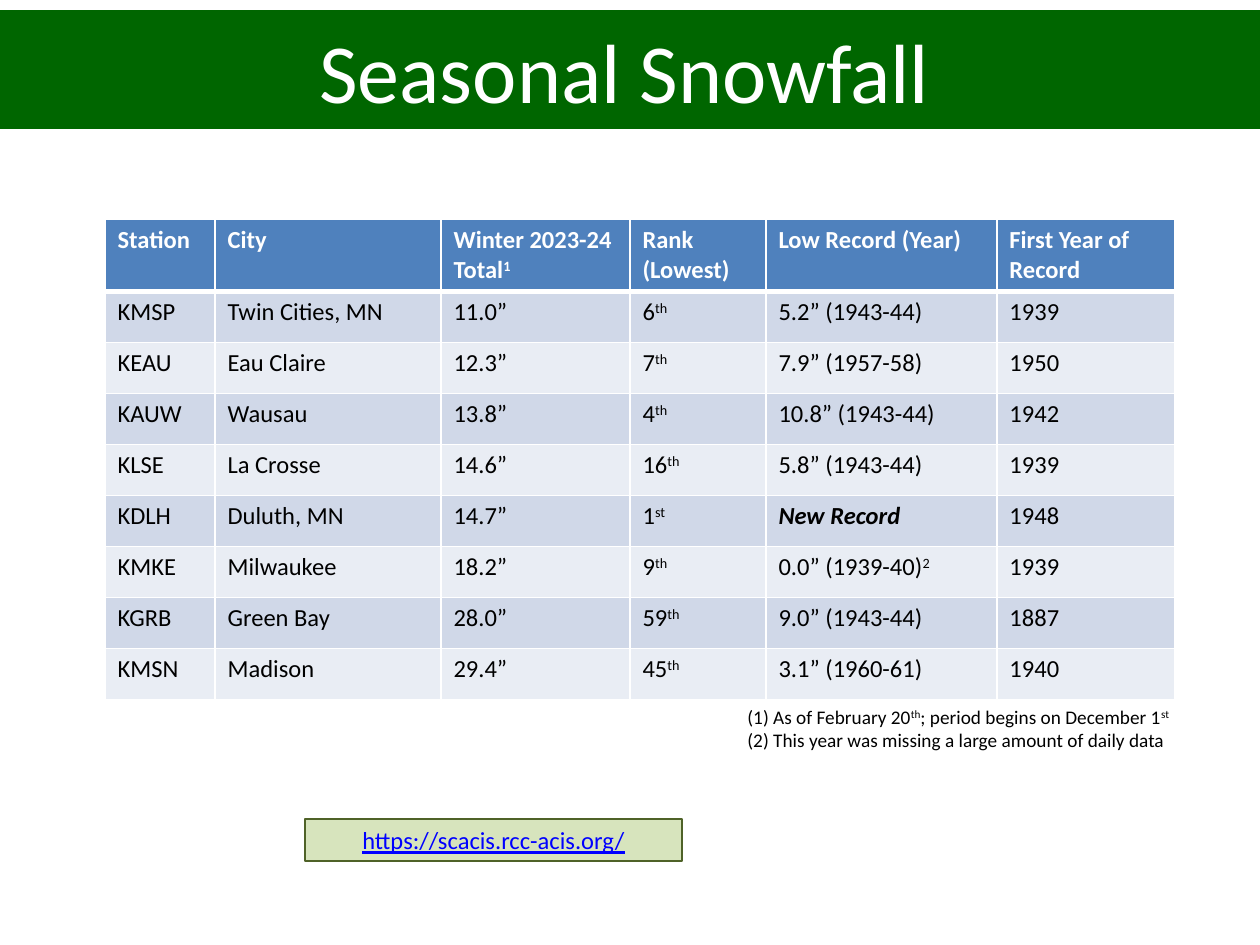
from lxml import etree
from pptx import Presentation, util as u
from pptx.dml.color import RGBColor
from pptx.enum import shapes, text
from pptx.oxml.ns import qn

HEAD = ["Station", "City", "Winter 2023-24 Total^1", "Rank (Lowest)",
        "Low Record (Year)", "First Year of Record"]
ROWS = [
    ["KMSP", "Twin Cities, MN", "11.0”", "6^th", "5.2” (1943-44)", "1939"],
    ["KEAU", "Eau Claire", "12.3”", "7^th", "7.9” (1957-58)", "1950"],
    ["KAUW", "Wausau", "13.8”", "4^th", "10.8” (1943-44)", "1942"],
    ["KLSE", "La Crosse", "14.6”", "16^th", "5.8” (1943-44)", "1939"],
    ["KDLH", "Duluth, MN", "14.7”", "1^st", "New Record", "1948"],
    ["KMKE", "Milwaukee", "18.2”", "9^th", "0.0” (1939-40)^2", "1939"],
    ["KGRB", "Green Bay", "28.0”", "59^th", "9.0” (1943-44)", "1887"],
    ["KMSN", "Madison", "29.4”", "45^th", "3.1” (1960-61)", "1940"],
]
COLS = [110, 226, 189, 136, 231, 178]
NOTES = ["(1) As of February 20^th^; period begins on December 1^st",
         "(2) This year was missing a large amount of daily data"]


def px(n):
    return u.Emu(round(n * 914400 / 126))


def hue(code):
    return RGBColor.from_string(code)


def write(par, words, size, color, bold=False, italic=False, line=False):
    font = par.font
    font.name, font.size = "Calibri", u.Pt(size)
    font.bold, font.italic, font.underline = bold, italic, line
    font.color.rgb = hue(color)
    for i, part in enumerate(words.split("^")):
        run = par.add_run()
        run.text = part
        if i % 2:
            run._r.get_or_add_rPr().set("baseline", "30000")


def panel(slide, box, fill, edge=None):
    rect = slide.shapes.add_shape(shapes.MSO_SHAPE.RECTANGLE, *map(px, box))
    rect.shadow.inherit = False
    rect.fill.solid()
    rect.fill.fore_color.rgb = hue(fill)
    if edge:
        rect.line.color.rgb = hue(edge)
        rect.line.width = u.Pt(0.75)
    else:
        rect.line.fill.background()
    frame = rect.text_frame
    frame.word_wrap = True
    frame.vertical_anchor = text.MSO_ANCHOR.MIDDLE
    par = frame.paragraphs[0]
    par.alignment = text.PP_ALIGN.CENTER
    return par


def title(slide, box):
    write(panel(slide, box, "006600"), "Seasonal Snowfall", 48, "FFFFFF")


def source(slide, box):
    par = panel(slide, box, "D7E4BD", "4F6228")
    write(par, "https://scacis.rcc-acis.org/", 14, "0000FF", line=True)


def border(cell, top, base):
    props = cell._tc.get_or_add_tcPr()
    for tag, width in (("lnL", 1), ("lnR", 1), ("lnT", top), ("lnB", base)):
        line = etree.SubElement(props, qn("a:" + tag), w=str(u.Pt(width)))
        fill = etree.SubElement(line, qn("a:solidFill"))
        etree.SubElement(fill, qn("a:srgbClr"), val="FFFFFF")


def table(slide, box, head=72):
    data = [HEAD] + ROWS
    grid = slide.shapes.add_table(len(data), len(COLS), *map(px, box)).table
    for col, width in zip(grid.columns, COLS):
        col.width = px(width)
    for r, row in enumerate(data):
        grid.rows[r].height = px((box[3] - head) / len(ROWS) if r else head)
        fill = ("E9EDF4", "D0D8E8")[r % 2] if r else "4F81BD"
        for c, words in enumerate(row):
            cell = grid.cell(r, c)
            border(cell, 3 if r == 1 else 1, 1 if r else 3)
            cell.fill.solid()
            cell.fill.fore_color.rgb = hue(fill)
            new = words == "New Record"
            write(cell.text_frame.paragraphs[0], words, 14,
                  "000000" if r else "FFFFFF", bold=new or r == 0, italic=new)


def notes(slide, box):
    frame = slide.shapes.add_textbox(*map(px, box)).text_frame
    frame.word_wrap = True
    for i, words in enumerate(NOTES):
        par = frame.add_paragraph() if i else frame.paragraphs[0]
        write(par, words, 11, "000000")


def main():
    deck = Presentation()
    deck.slide_width, deck.slide_height = px(1260), px(945)
    slide = deck.slides.add_slide(deck.slide_layouts[6])
    title(slide, (-21, 10, 1291, 119))
    source(slide, (305, 819, 377, 42))
    table(slide, (105, 219, sum(COLS), 480))
    notes(slide, (735, 699, 462, 59))
    deck.save("out.pptx")


if __name__ == "__main__":
    main()
